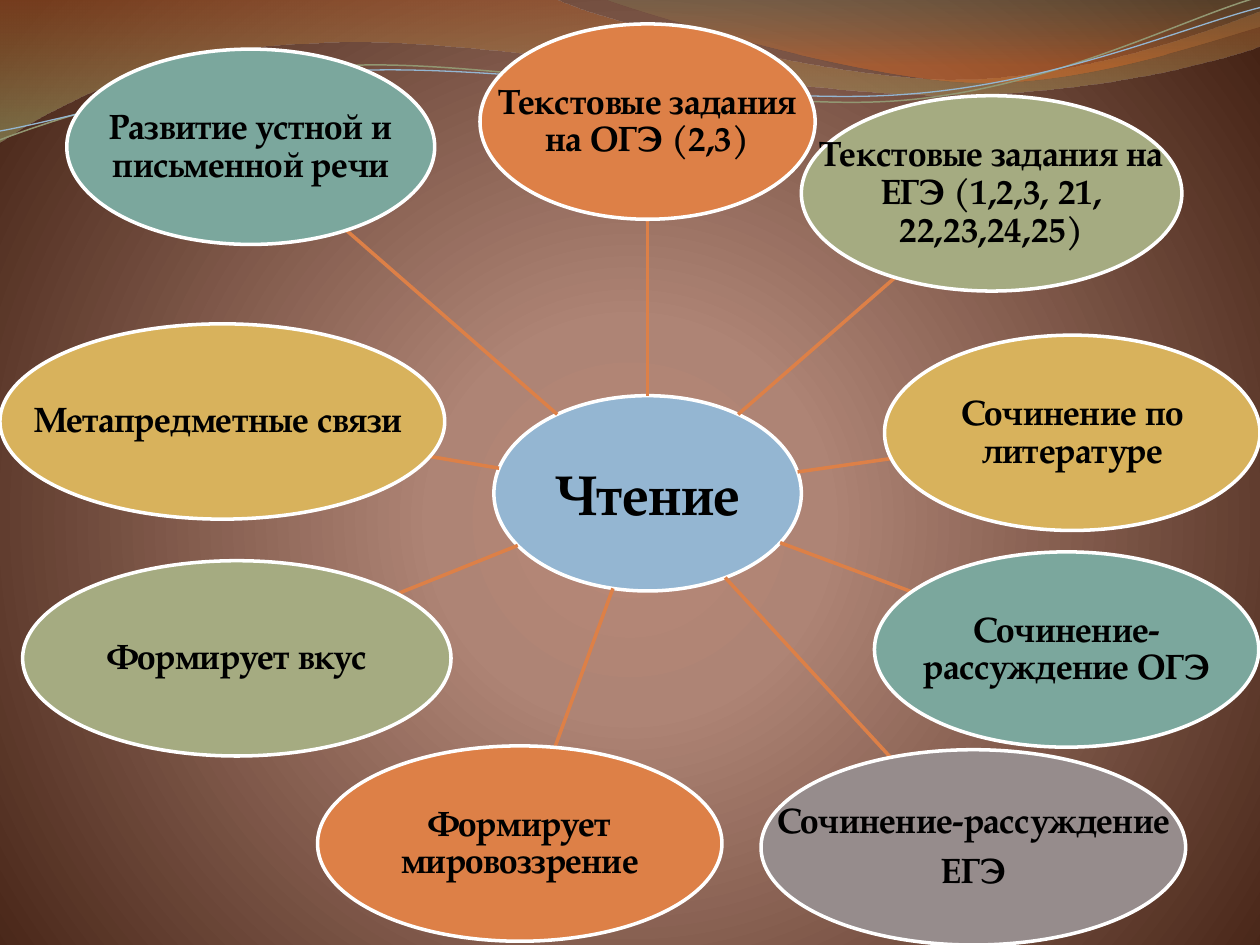
from math import hypot
from pptx import Presentation
from pptx.dml.color import RGBColor
from pptx.enum.shapes import MSO_CONNECTOR, MSO_SHAPE
from pptx.enum.text import MSO_ANCHOR, PP_ALIGN
from pptx.oxml import parse_xml
from pptx.oxml.ns import nsdecls
from pptx.util import Inches, Pt

OVAL, LINE = MSO_SHAPE.OVAL, MSO_CONNECTOR.STRAIGHT
MID, MIDDLE = PP_ALIGN.CENTER, MSO_ANCHOR.MIDDLE
BLACK, WHITE = RGBColor(0, 0, 0), RGBColor(255, 255, 255)
BLUE = RGBColor(0x94, 0xB6, 0xD2)
ORANGE = RGBColor(0xDD, 0x80, 0x47)
GREEN = RGBColor(0xA5, 0xAB, 0x81)
GOLD = RGBColor(0xD8, 0xB2, 0x5C)
TEAL = RGBColor(0x7B, 0xA7, 0x9D)
GREY = RGBColor(0x96, 0x8C, 0x8C)
OLIVE = RGBColor(0x92, 0x97, 0x72)
RUST, MOSS = RGBColor(0xAF, 0x5C, 0x29), RGBColor(0x9D, 0xA6, 0x6B)
FERN, FLAME = RGBColor(0x7D, 0x83, 0x5B), RGBColor(0xDD, 0x6B, 0x24)
SAND, ROSE = RGBColor(0xB8, 0x88, 0x76), RGBColor(0xAE, 0x84, 0x75)
BROWN = RGBColor(0x45, 0x23, 0x15)
FACE = "TeX Gyre Pagella"
TALL = 1.55

# Content: paragraphs, colour, left, top, width (every oval is TALL high)
HUB = (["Чтение"], BLUE, 3.92, 3.14, 2.44)
TOPICS = [
    (["Текстовые задания на ОГЭ (2,3)"], ORANGE, 3.81, 0.19, 2.66),
    (["Текстовые задания на ЕГЭ (1,2,3, 21, 22,23,24,25)"], GREEN,
     6.36, 0.76, 3.02),
    (["Сочинение по литературе"], GOLD, 7.02, 2.66, 2.98),
    (["Сочинение-рассуждение ОГЭ"], TEAL, 6.94, 4.38, 3.05),
    (["Сочинение-рассуждение", "ЕГЭ"], GREY, 6.04, 5.95, 3.37),
    (["Формирует мировоззрение"], ORANGE, 2.52, 5.92, 3.21),
    (["Формирует вкус"], GREEN, 0.18, 4.45, 3.4),
    (["Метапредметные связи "], GOLD, 0, 2.57, 3.53),
    (["Развитие устной и письменной речи"], TEAL, 0.53, 0.39, 2.92),
]

# Waves: a start, then points (2 numbers) and Bezier curves (6 numbers)
BANDS = [
    ([(0, 0), (4.4, -0.01), (4.76, 0.17, 6.64, 0.63, 7.58, 0.63),
      (8.53, 0.63, 9.58, 0.26, 10, 0.09), (10.01, 0.36),
      (9.83, 0.44, 8.7, 0.76, 7.46, 0.75),
      (6.22, 0.75, 3.82, 0.28, 2.57, 0.34),
      (1.29, 0.36, 0.46, 0.83, -0.01, 1.13), (0, 0)],
     [(0, RUST, 45), (100, MOSS, 55)]),
    ([(4.79, -0.01), (5.09, 0.11, 6.82, 0.62, 7.69, 0.65),
      (8.56, 0.69, 9.61, 0.32, 10, 0.21), (10, 0), (4.79, -0.01)],
     [(0, FERN, 30), (80, FLAME, 45)]),
]
STRANDS = [
    ([(0, 1.11), (0.48, 0.93, 1.58, 0.57, 2.77, 0.52),
      (3.95, 0.47, 5.93, 0.89, 7.13, 0.8),
      (8.33, 0.71, 9.38, 0.15, 9.98, -0.02)], OLIVE, 0.85),
    ([(0, 1.04), (0.47, 0.96, 1.64, 0.61, 2.83, 0.56),
      (4.03, 0.51, 5.97, 0.84, 7.17, 0.75),
      (8.36, 0.67, 9.41, 0.21, 10, 0.06)], BLUE, 0.75),
]

deck = Presentation()
deck.slide_width, deck.slide_height = Inches(10), Inches(7.5)
slide = deck.slides.add_slide(deck.slide_layouts[6])
shapes = slide.shapes


def swap(old, xml):
    old.getparent().replace(old, parse_xml(xml))


def blend(part, stops, form):
    """Replace a solid fill by a gradient of (place, colour, opacity)."""
    marks = "".join(
        f'<a:gs pos="{at * 1000}"><a:srgbClr val="{tint}">'
        f'<a:alpha val="{clear * 1000}"/></a:srgbClr></a:gs>'
        for at, tint, clear in stops)
    swap(part.xpath(".//p:bgPr/a:solidFill | ./p:spPr/a:solidFill")[0],
         f'<a:gradFill {nsdecls("a")} rotWithShape="1">'
         f'<a:gsLst>{marks}</a:gsLst>{form}</a:gradFill>')


def wave(steps, close):
    """Draw the end points as a freeform, then bend its lines to curves."""
    ends = [(Inches(s[-2]), Inches(s[-1])) for s in steps]
    pen = shapes.build_freeform(*ends[0])
    pen.add_line_segments(ends[1:], close=close)
    form = pen.convert_to_shape()
    form.shadow.inherit = False
    for line, step in zip(form.element.xpath(".//a:lnTo"), steps[1:]):
        if len(step) == 6:
            knots = "".join(
                f'<a:pt x="{Inches(x) - form.left}" y="{Inches(y) - form.top}"/>'
                for x, y in zip(step[::2], step[1::2]))
            swap(line, f'<a:cubicBezTo {nsdecls("a")}>{knots}</a:cubicBezTo>')
    return form


def stroke(line, tint, width):
    line.color.rgb, line.width = tint, Pt(width)


def bubble(topic, size, drop=0.01):
    words, tint, left, top, wide = topic
    box = [Inches(v) for v in (left, top, wide, TALL)]
    oval = shapes.add_shape(OVAL, *box)
    oval.shadow.inherit = False
    oval.fill.solid()
    oval.fill.fore_color.rgb = tint
    stroke(oval.line, WHITE, 2)
    # The label spans the full width of the oval
    frame = shapes.add_textbox(*box).text_frame
    look = dict.fromkeys(("margin_left", "margin_right", "margin_bottom"),
                         Inches(0.01))
    look |= {"margin_top": Inches(drop), "word_wrap": True,
             "vertical_anchor": MIDDLE}
    for key, val in look.items():
        setattr(frame, key, val)
    frame.text = "\n".join(words)
    for para in frame.paragraphs:
        para.alignment, para.line_spacing = MID, 0.9
        para.space_after = Pt(size * 0.35)
        font = para.runs[0].font
        font.color.rgb = BLACK
        for key, val in {"name": FACE, "size": Pt(size), "bold": True}.items():
            setattr(font, key, val)


def centre(topic):
    return topic[2] + topic[4] / 2, topic[3] + TALL / 2


def rim(topic, goal):
    """Point where the line from an oval's centre to goal leaves the oval."""
    x, y = centre(topic)
    dx, dy = goal[0] - x, goal[1] - y
    t = 1 / hypot(dx / (topic[4] / 2), dy / (TALL / 2))
    return Inches(x + dx * t), Inches(y + dy * t)


def spoke(topic):
    link = shapes.add_connector(LINE, *rim(HUB, centre(topic)),
                                *rim(topic, centre(HUB)))
    stroke(link.line, ORANGE, 2)
    link.element.spPr.append(parse_xml(f'<a:effectLst {nsdecls("a")}/>'))


# Background
slide.background.fill.solid()
slide.background.fill.fore_color.rgb = BROWN
blend(slide.element, [(0, SAND, 100), (25, ROSE, 100), (100, BROWN, 100)],
      '<a:path path="circle"><a:fillToRect l="10000" t="110000" '
      'r="10000" b="100000"/></a:path>')

# Waves at the top
for steps, stops in BANDS:
    band = wave(steps, True)
    band.fill.solid()
    band.fill.fore_color.rgb = stops[0][1]
    band.line.fill.background()
    blend(band.element, stops, '<a:lin ang="5400000" scaled="1"/>')
for steps, tint, width in STRANDS:
    strand = wave(steps, False)
    strand.fill.background()
    stroke(strand.line, tint, width)

# Hub and its topics
bubble(HUB, 32, 0.07)
for topic in TOPICS:
    spoke(topic)
    bubble(topic, 20)

deck.save("out.pptx")
